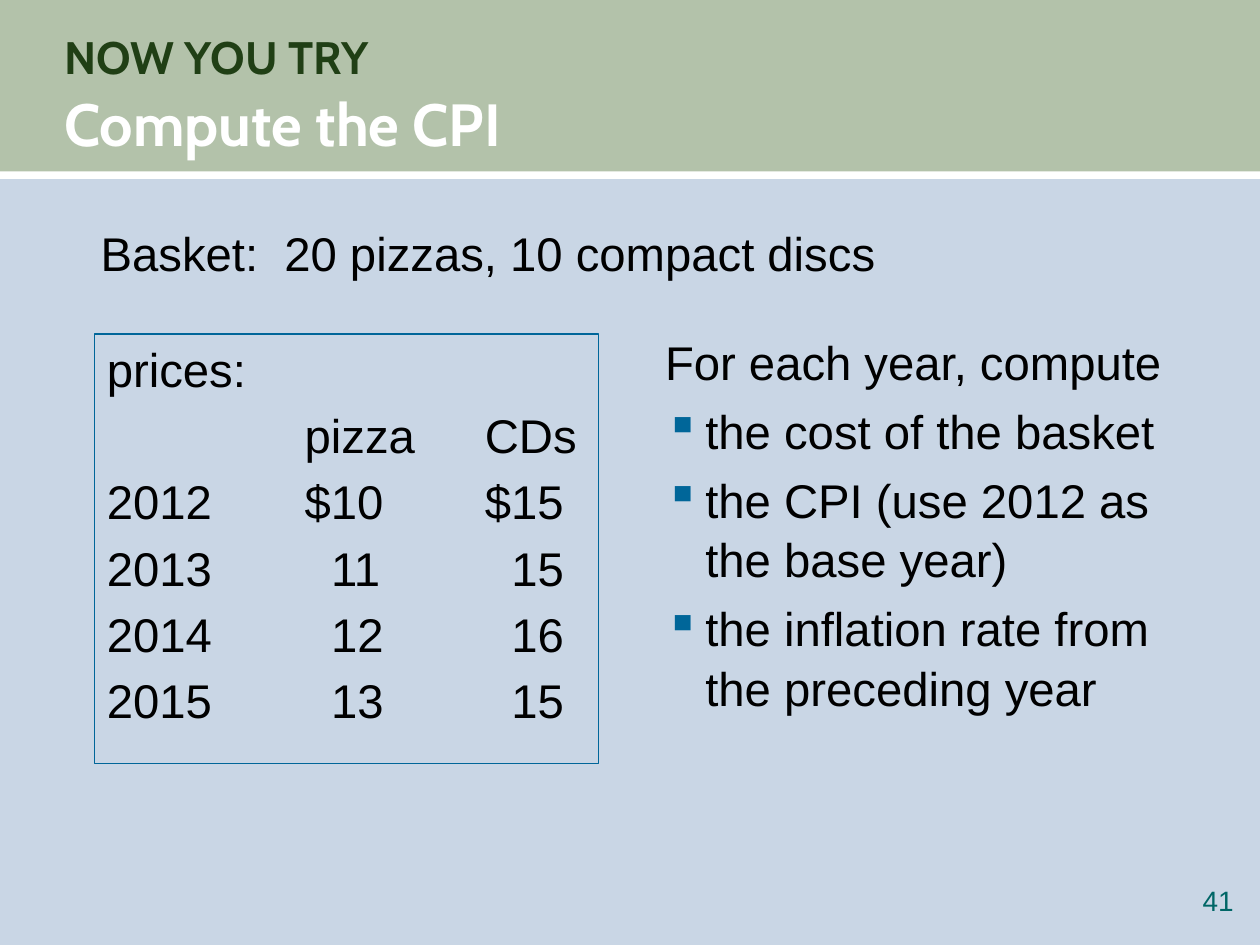
from lxml import etree
from pptx import Presentation, util as u
from pptx.dml.color import RGBColor
from pptx.enum import shapes, text
from pptx.oxml.ns import qn

INCH = u.Inches


def colour(value):
    return RGBColor.from_string(value)


def write(frame, content, size=27, font="Arial", fill="000000", bold=False,
          align=text.PP_ALIGN.LEFT, line=None, before=0, indent=0,
          bullet=None, tabs=()):
    """Add one formatted paragraph to a text frame."""
    first = not frame.text
    paragraph = frame.paragraphs[0] if first else frame.add_paragraph()
    paragraph.text = content
    paragraph.alignment = align
    paragraph.space_before = u.Pt(0 if first else before)
    if line:
        paragraph.line_spacing = line
    properties = paragraph._p.get_or_add_pPr()
    if indent:
        properties.set("marL", str(INCH(indent)))
        properties.set("indent", str(-INCH(indent)))
    if bullet:
        bullet_colour = etree.SubElement(properties, qn("a:buClr"))
        etree.SubElement(bullet_colour, qn("a:srgbClr"), val=bullet)
        etree.SubElement(properties, qn("a:buChar"), char="▪")
    if tabs:
        stops = etree.SubElement(properties, qn("a:tabLst"))
        for stop in tabs:
            etree.SubElement(stops, qn("a:tab"), pos=str(INCH(stop)), algn="l")
    style = paragraph.font
    style.name, style.size, style.bold = font, u.Pt(size), bold
    style.color.rgb = colour(fill)


class SlideBuilder:
    heading_font = "Cabin"
    accent = "006699"
    gap = 5.4
    spacing = 1.05

    def __init__(self, presentation, background):
        self.slide = presentation.slides.add_slide(presentation.slide_layouts[6])
        fill = self.slide.background.fill
        fill.solid()
        fill.fore_color.rgb = colour(background)

    def rectangle(self, left, top, width, height, fill=None, line=None):
        shape = self.slide.shapes.add_shape(
            shapes.MSO_SHAPE.RECTANGLE,
            INCH(left), INCH(top), INCH(width), INCH(height))
        shape.shadow.inherit = False
        if fill:
            shape.fill.solid()
            shape.fill.fore_color.rgb = colour(fill)
        else:
            shape.fill.background()
        if line:
            shape.line.color.rgb = colour(line)
            shape.line.width = u.Pt(0.75)
        else:
            shape.line.fill.background()
        frame = shape.text_frame
        frame.vertical_anchor = text.MSO_ANCHOR.TOP
        return frame

    def text_box(self, left, top, width, height, inset=True,
                 anchor=text.MSO_ANCHOR.TOP):
        frame = self.slide.shapes.add_textbox(
            INCH(left), INCH(top), INCH(width), INCH(height)).text_frame
        frame.word_wrap = True
        frame.vertical_anchor = anchor
        if not inset:
            frame.margin_left = frame.margin_right = 0
            frame.margin_top = frame.margin_bottom = 0
        return frame


def main():
    presentation = Presentation()
    presentation.slide_width, presentation.slide_height = INCH(10), INCH(7.5)
    builder = SlideBuilder(presentation, "C9D6E5")

    # Header band, title and rule
    builder.rectangle(0, -0.01, 10, 1.41, fill="B3C2AA")
    title = builder.text_box(0.51, 0.22, 9.02, 1.03, inset=False,
                             anchor=text.MSO_ANCHOR.MIDDLE)
    for content, size, fill in (("NOW YOU TRY", 26, "203F15"),
                                ("Compute the CPI", 34, "FFFFFF")):
        write(title, content, size=size, font=builder.heading_font, fill=fill,
              bold=True, line=builder.spacing)
    builder.rectangle(0, 1.36, 10, 0.06, fill="FFFFFF")

    # Slide number
    number = builder.text_box(9.24, 7.01, 0.55, 0.32, inset=False)
    write(number, "41", size=16, fill="006666", align=text.PP_ALIGN.RIGHT)

    # Basket
    basket = builder.text_box(0.7, 1.71, 8.72, 0.64)
    write(basket, "Basket:  20 pizzas, 10 compact discs", line=builder.spacing)

    # Prices: figures without a dollar sign start further right
    prices = builder.rectangle(0.75, 2.65, 4, 3.41, line=builder.accent)
    columns = (1.57, 3)
    digits = tuple(column + 0.21 for column in columns)
    for row, tabs in ((("prices:",), columns),
                      (("", "pizza", "CDs"), columns),
                      (("2012", "$10", "$15"), columns),
                      (("2013", "11", "15"), digits),
                      (("2014", "12", "16"), digits),
                      (("2015", "13", "15"), digits)):
        write(prices, "\t".join(row), before=builder.gap, tabs=tabs)

    # Tasks
    tasks = builder.text_box(5.18, 2.57, 4.5, 4.17)
    write(tasks, "For each year, compute", line=builder.spacing, indent=0.32)
    for task in ("the cost of the basket",
                 "the CPI (use 2012 as the base year)",
                 "the inflation rate from the preceding year"):
        write(tasks, task, line=builder.spacing, before=builder.gap,
              indent=0.32, bullet=builder.accent)

    presentation.save("out.pptx")


if __name__ == "__main__":
    main()
